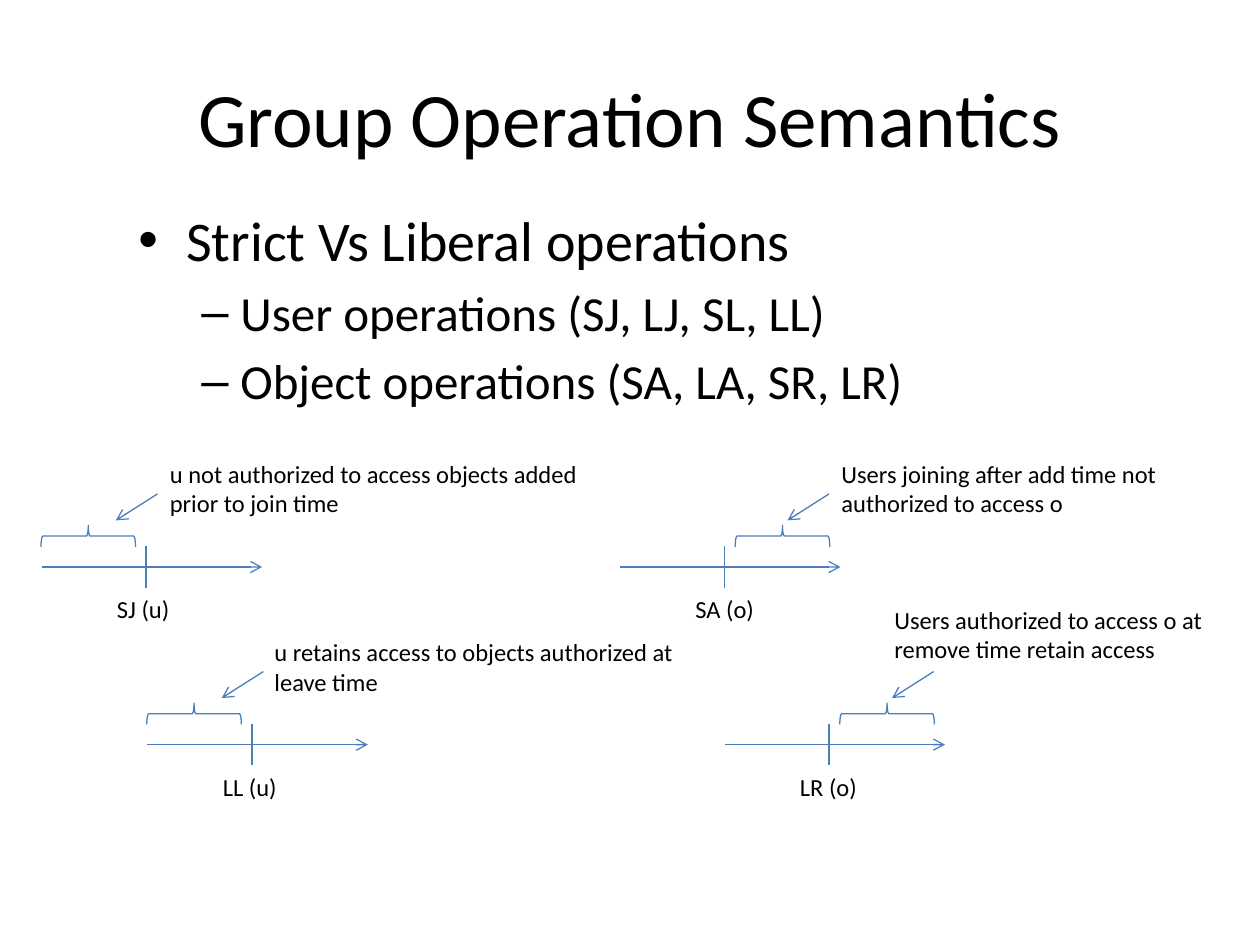
import pptx
import pptx.enum.shapes
import pptx.enum.text
import pptx.oxml.ns
import pptx.util
from lxml import etree

Inches = pptx.util.Inches
Pt = pptx.util.Pt
ALIGN = pptx.enum.text.PP_ALIGN
ANCHOR = pptx.enum.text.MSO_ANCHOR

COLORS = {"text": "000000", "line": "4B7EBC"}
FONT = "Calibri"

TITLE = "Group Operation Semantics"
# text, size, bullet, left margin, hanging indent
BULLETS = [
    ("Strict Vs Liberal operations", 32, "•", 0.38, 0.38),
    ("User operations (SJ, LJ, SL, LL)", 28, "–", 0.81, 0.31),
    ("Object operations (SA, LA, SR, LR)", 28, "–", 0.81, 0.31),
]

# Offsets from the start of a timeline: the brace lies before or after the tick
BEFORE = {"brace": 0.37, "pointer": 0.92}
AFTER = {"brace": 1.29, "pointer": 1.66}
# start x, axis y, label, brace side, note, note box (left, top, width)
TIMELINES = [
    (0.33, 4.5, "SJ (u)", BEFORE,
     "u not authorized to access objects added prior to join time", (1.25, 3.59, 3.5)),
    (4.92, 4.5, "SA (o)", AFTER,
     "Users joining after add time not authorized to access o", (6.58, 3.59, 3)),
    (1.17, 5.91, "LL (u)", BEFORE,
     "u retains access to objects authorized at leave time", (2.08, 5.01, 3.5)),
    (5.75, 5.91, "LR (o)", AFTER,
     "Users authorized to access o at remove time retain access", (7, 4.75, 3)),
]
AXIS_LENGTH = 1.75
TICK_OFFSET = 0.83
TICK_HALF = 0.165
BRACE_DEPTH, BRACE_SPAN = 0.17, 0.75
BRACE_RISE = 0.245  # from the axis up to the middle of the brace


def rgb(name):
    return pptx.dml.color.RGBColor.from_string(COLORS[name])


def sub(parent, tag, **attributes):
    return etree.SubElement(parent, pptx.oxml.ns.qn(tag), attributes)


def add_span(para, text, size):
    span = para.add_run()
    span.text = text
    for key, value in {"name": FONT, "size": Pt(size)}.items():
        setattr(span.font, key, value)
    span.font.color.rgb = rgb("text")


def add_frame(page, left, top, width, height, anchor=ANCHOR.TOP):
    box = page.shapes.add_textbox(*map(Inches, (left, top, width, height)))
    for key, value in {"word_wrap": True, "vertical_anchor": anchor}.items():
        setattr(box.text_frame, key, value)
    return box.text_frame


def add_text(page, text, size, *place, align=ALIGN.LEFT, anchor=ANCHOR.TOP):
    para = add_frame(page, *place, anchor=anchor).paragraphs[0]
    para.alignment = align
    add_span(para, text, size)


def add_bullets(page, *place):
    frame = add_frame(page, *place)
    for index, (text, size, bullet, margin, hanging) in enumerate(BULLETS):
        para = frame.add_paragraph() if index else frame.paragraphs[0]
        para.level = min(index, 1)
        para.space_before = Pt(size * 0.2)
        properties = para._p.get_or_add_pPr()
        properties.set("marL", str(Inches(margin)))
        properties.set("indent", str(-Inches(hanging)))
        sub(properties, "a:buFont", typeface="Arial")
        sub(properties, "a:buChar", char=bullet)
        add_span(para, text, size)


def style_line(shape):
    shape.line.color.rgb = rgb("line")
    shape.line.width = Pt(0.75)


def add_line(page, x1, y1, x2, y2, arrow=False):
    line = page.shapes.add_connector(
        pptx.enum.shapes.MSO_CONNECTOR.STRAIGHT, *map(Inches, (x1, y1, x2, y2)))
    style_line(line)
    if arrow:
        sub(line.line._get_or_add_ln(), "a:tailEnd", type="arrow")
    sub(line._element.spPr, "a:effectLst")


def add_brace(page, center_x, center_y):
    """Add a brace that opens downwards, centred on the given point."""
    brace = page.shapes.add_shape(
        pptx.enum.shapes.MSO_SHAPE.LEFT_BRACE,
        Inches(center_x - BRACE_DEPTH / 2), Inches(center_y - BRACE_SPAN / 2),
        Inches(BRACE_DEPTH), Inches(BRACE_SPAN))
    brace.rotation = 90
    brace.shadow.inherit = False
    brace.fill.background()
    style_line(brace)


def add_timeline(page, x, y, label, side, note, note_place):
    tick = x + TICK_OFFSET
    pointer = x + side["pointer"]
    add_line(page, x, y, x + AXIS_LENGTH, y, arrow=True)
    add_line(page, tick, y - TICK_HALF, tick, y + TICK_HALF)
    add_text(page, label, 14, tick - 0.33, y + TICK_HALF, 0.75, 0.34)
    add_brace(page, x + side["brace"], y - BRACE_RISE)
    add_text(page, note, 14, *note_place, 0.57)
    add_line(page, pointer, y - 0.58, pointer - 0.33, y - 0.37, arrow=True)


def main():
    deck = pptx.Presentation()
    deck.slide_width, deck.slide_height = Inches(10), Inches(7.5)
    page = deck.slides.add_slide(deck.slide_layouts[6])
    add_text(page, TITLE, 44, 0.5, 0.3, 9, 1.25, align=ALIGN.CENTER, anchor=ANCHOR.MIDDLE)
    add_bullets(page, 1, 1.58, 8.5, 2)
    for timeline in TIMELINES:
        add_timeline(page, *timeline)
    deck.save("out.pptx")


if __name__ == "__main__":
    main()
